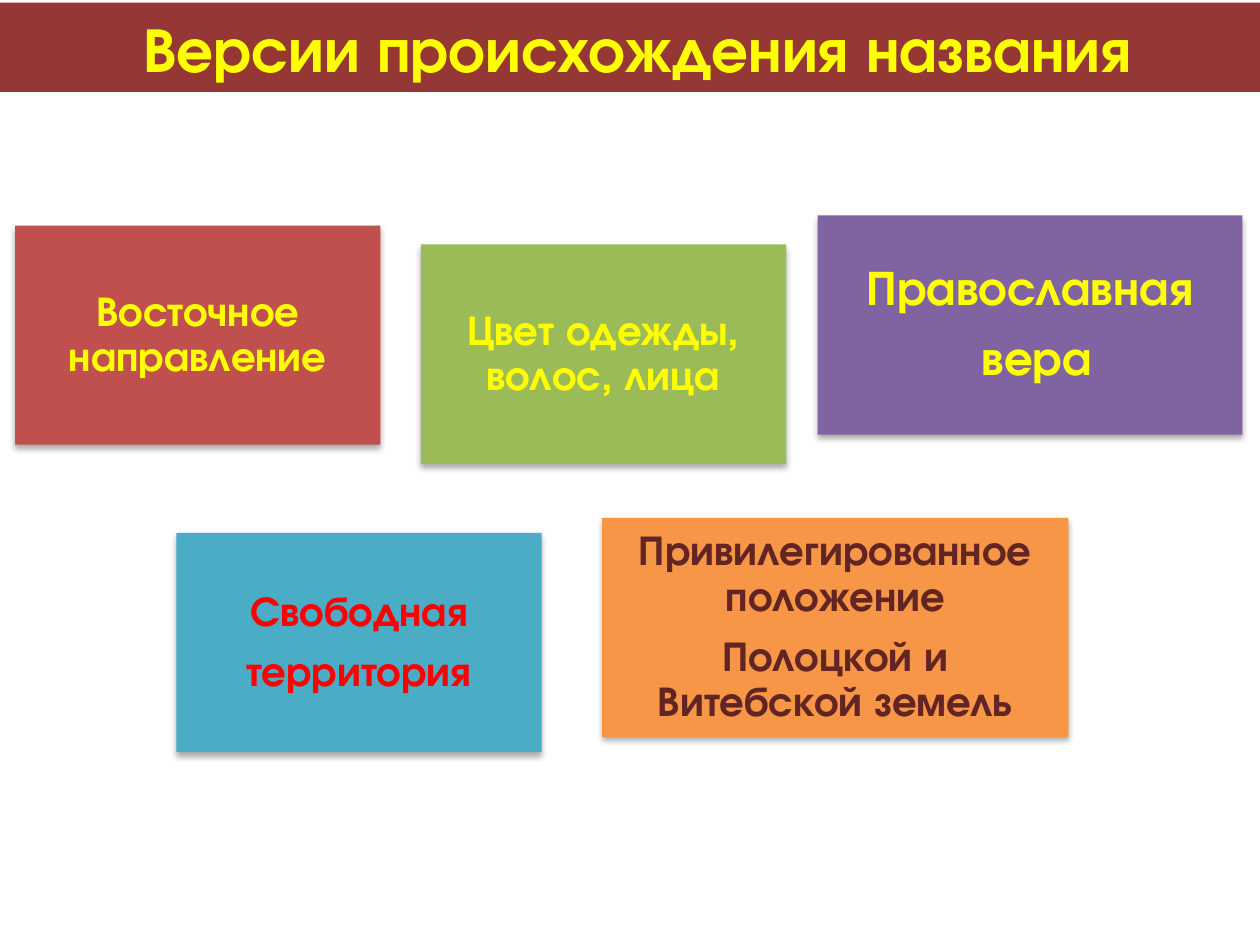
"""Builds a slide with five versions of the origin of a name."""
from lxml.etree import SubElement
from pptx import Presentation
from pptx.dml.color import RGBColor
from pptx.enum.shapes import MSO_SHAPE as Preset
from pptx.enum.text import MSO_ANCHOR as Anchor, MSO_AUTO_SIZE as AutoSize, PP_ALIGN as Align
from pptx.oxml.ns import qn
from pptx.util import Inches, Pt

FONT = "TeX Gyre Adventor"
WIDTH, HEIGHT = Inches(10), Inches(7.5)
CARD_WIDTH, CARD_HEIGHT = Inches(2.9), Inches(1.74)
COLORS = {
    "banner": "953735", "red": "C0504D", "green": "9BBB59", "purple": "8064A2",
    "teal": "4BACC6", "orange": "F79646", "yellow": "FFFF00",
    "bright_red": "FF0000", "maroon": "632523", "shadow": "000000",
}
VERSIONS = [
    (0.12, 1.79, 2.9, "red", ["Восточное направление"], {}),
    (3.34, 1.94, 2.9, "green", ["Цвет одежды, волос, лица"], {}),
    (6.49, 1.71, 3.37, "purple", ["Православная", " вера"], {"size": 28, "inset": 0.12}),
    (1.4, 4.23, 2.9, "teal", ["Свободная", "территория"], {"color": "bright_red"}),
    (4.78, 4.11, 3.7, "orange",
     ["Привилегированное положение", "Полоцкой и Витебской земель"], {"color": "maroon"}),
]


def rgb(name):
    return RGBColor.from_string(COLORS[name])


def paint(box, color):
    box.fill.solid()
    box.fill.fore_color.rgb = rgb(color)
    box.line.fill.background()


def write(box, lines, size=24, color="yellow", inset=0.1, spacing=0.9, after=0.35):
    frame = box.text_frame
    frame.word_wrap = True
    frame.auto_size = AutoSize.NONE
    frame.vertical_anchor = Anchor.MIDDLE
    frame.margin_left = frame.margin_right = Inches(inset)
    frame.margin_top = frame.margin_bottom = Inches(inset)
    for index, line in enumerate(lines):
        paragraph = frame.add_paragraph() if index else frame.paragraphs[0]
        paragraph.alignment = Align.CENTER
        paragraph.line_spacing = spacing
        paragraph.space_after = Pt(size * after)
        run = paragraph.add_run()
        run.text = line
        run.font.name, run.font.size, run.font.bold = FONT, Pt(size), True
        run.font.color.rgb = rgb(color)


def cast_shadow(box):
    box.shadow.inherit = False
    effects = box._element.spPr.find(qn("a:effectLst"))
    shadow = SubElement(effects, qn("a:outerShdw"), blurRad=str(Pt(3.5)),
                        dist=str(Pt(2.2)), dir="5400000", rotWithShape="0")
    tint = SubElement(shadow, qn("a:srgbClr"), val=COLORS["shadow"])
    SubElement(tint, qn("a:alpha"), val="32000")


def add_banner(slide, heading):
    banner = slide.shapes.title
    banner.left, banner.top = 0, Inches(0.02)
    banner.width, banner.height = Inches(10.12), Inches(0.71)
    paint(banner, "banner")
    write(banner, [heading], size=36, inset=0.05, spacing=1.0, after=0)


def add_version(slide, left, top, width, fill, lines, style):
    card = slide.shapes.add_shape(Preset.RECTANGLE, Inches(left), Inches(top),
                                  Inches(width), CARD_HEIGHT)
    paint(card, fill)
    cast_shadow(card)
    write(card, lines, **style)


def main():
    deck = Presentation()
    deck.slide_width, deck.slide_height = WIDTH, HEIGHT
    slide = deck.slides.add_slide(deck.slide_layouts[5])
    add_banner(slide, "Версии происхождения названия")
    for version in VERSIONS:
        add_version(slide, *version)
    deck.save("out.pptx")


if __name__ == "__main__":
    main()
